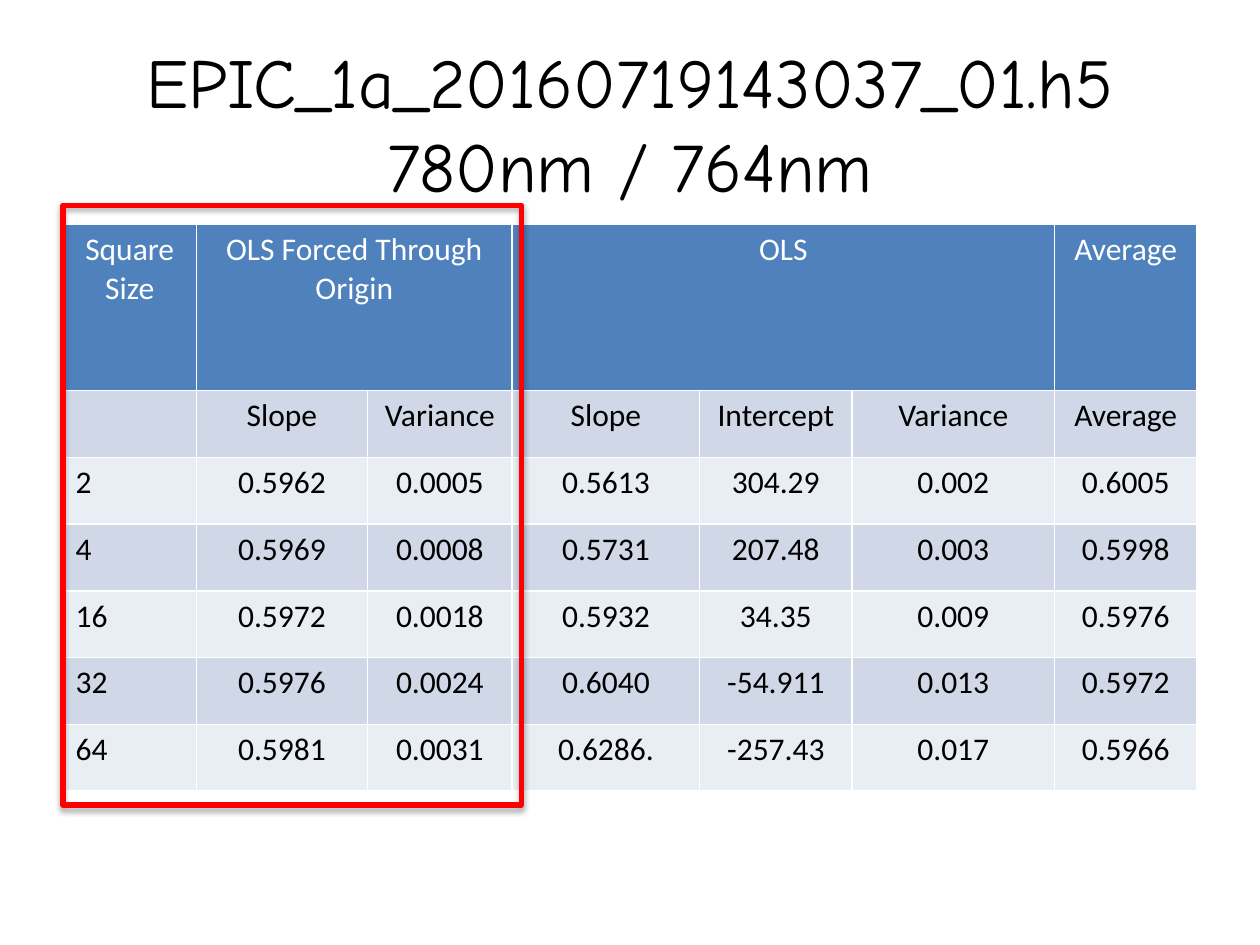
from dataclasses import dataclass
from lxml.etree import SubElement
from pptx import Presentation
from pptx.dml.color import RGBColor
from pptx.enum.shapes import MSO_SHAPE
from pptx.enum.text import MSO_ANCHOR, MSO_AUTO_SIZE, PP_ALIGN
from pptx.oxml.ns import qn
from pptx.util import Inches, Pt


@dataclass(frozen=True)
class Theme:
    white: str = "FFFFFF"
    black: str = "000000"
    head: str = "4F81BD"
    bands: tuple = ("E9EDF4", "D0D8E8")
    mark: str = "FF0000"
    title: tuple = ("Comic Neue", 40)
    body: tuple = ("Calibri", 18)
    line: float = 3


THEME = Theme()
WIDTH, HEIGHT = 10, 7.5
COLS = [1.06, 1.36, 1.15, 1.49, 1.21, 1.61, 1.13]
ROWS = [1.32] + [0.53] * 6
SPANS = [(1, 2), (3, 5)]
DATA = [
    ["Square Size", "OLS Forced Through Origin", "", "OLS", "", "", "Average"],
    ["", "Slope", "Variance", "Slope", "Intercept", "Variance", "Average"],
    ["2", "0.5962", "0.0005", "0.5613", "304.29", "0.002", "0.6005"],
    ["4", "0.5969", "0.0008", "0.5731", "207.48", "0.003", "0.5998"],
    ["16", "0.5972", "0.0018", "0.5932", "34.35", "0.009", "0.5976"],
    ["32", "0.5976", "0.0024", "0.6040", "-54.911", "0.013", "0.5972"],
    ["64", "0.5981", "0.0031", "0.6286.", "-257.43", "0.017", "0.5966"],
]


def style(frame, font, color, align):
    name, size = font
    for para in frame.paragraphs:
        para.alignment = align
        for run in para.runs:
            run.font.name = name
            run.font.size = Pt(size)
            run.font.bold = False
            run.font.color.rgb = RGBColor.from_string(color)


def add_title(slide, box, text):
    title = slide.shapes.title
    title.left, title.top, title.width, title.height = map(Inches, box)
    frame = title.text_frame
    frame.text = text
    frame.auto_size = MSO_AUTO_SIZE.NONE
    frame.vertical_anchor = MSO_ANCHOR.MIDDLE
    style(frame, THEME.title, THEME.black, PP_ALIGN.CENTER)


def add_grid(slide, box):
    table = slide.shapes.add_table(len(ROWS), len(COLS), *map(Inches, box)).table
    for col, share in zip(table.columns, COLS):
        col.width = Inches(box[2] * share / sum(COLS))
    for row, share in zip(table.rows, ROWS):
        row.height = Inches(box[3] * share / sum(ROWS))
    for first, last in SPANS:
        table.cell(0, first).merge(table.cell(0, last))
    for r, line in enumerate(DATA):
        fill = THEME.bands[r % 2] if r else THEME.head
        color = THEME.black if r else THEME.white
        for c, text in enumerate(line):
            cell = table.cell(r, c)
            cell.fill.solid()
            cell.fill.fore_color.rgb = RGBColor.from_string(fill)
            cell.text_frame.text = text
            align = PP_ALIGN.LEFT if c == 0 and r > 1 else PP_ALIGN.CENTER
            style(cell.text_frame, THEME.body, color, align)


def add_frame(slide, box):
    frame = slide.shapes.add_shape(MSO_SHAPE.RECTANGLE, *map(Inches, box))
    frame.fill.background()
    frame.line.color.rgb = RGBColor.from_string(THEME.mark)
    frame.line.width = Pt(THEME.line)
    frame.shadow.inherit = False
    effects = frame.element.spPr.find(qn("a:effectLst"))
    shade = SubElement(effects, qn("a:outerShdw"), blurRad=str(Pt(3.1)),
                       dist=str(Pt(1.8)), dir="5400000", rotWithShape="0")
    tint = SubElement(shade, qn("a:srgbClr"), val=THEME.black)
    SubElement(tint, qn("a:alpha"), val="35000")


def main():
    deck = Presentation()
    deck.slide_width, deck.slide_height = Inches(WIDTH), Inches(HEIGHT)
    slide = deck.slides.add_slide(deck.slide_layouts[5])
    left, wide = 0.05 * WIDTH, 0.9 * WIDTH
    top, high = 1.78, sum(ROWS)
    add_title(slide, (left, 0.35, wide, 1.25),
              "EPIC_1a_20160719143037_01.h5\v780nm / 764nm")
    add_grid(slide, (left, top, wide, high))
    add_frame(slide, (left, top - 0.15, sum(COLS[:3]) + 0.07, high + 0.26))
    deck.save("out.pptx")


if __name__ == "__main__":
    main()
